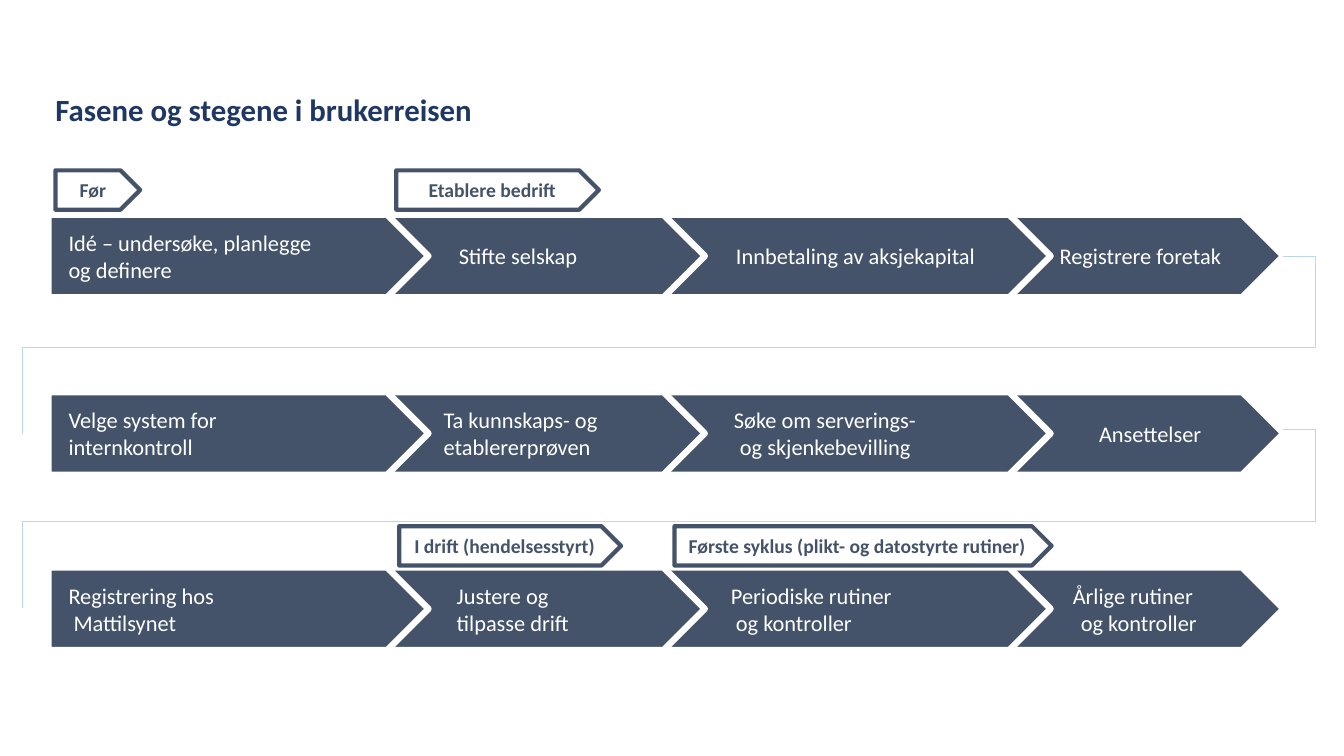
from pptx import Presentation
from pptx.dml.color import RGBColor
from pptx.enum.shapes import MSO_SHAPE as Shape
from pptx.enum.text import MSO_ANCHOR as Anchor, PP_ALIGN as Align
from pptx.util import Inches, Pt

HUES = {"slate": "44536A", "navy": "1F3863", "sky": "BCD6ED", "white": "FFFFFF"}

COLS = [(0.48, 3.77), (3.7, 3.29), (6.15, 4.27), (9.95, 2.78)]
STEP_H = 0.82
TAG_H = 0.39

ROWS = [
    (2.13, [
        ("Idé – undersøke, planlegge\vog definere", 0.2, 0),
        ("Stifte selskap", 0.85, 0),
        ("Innbetaling av aksjekapital", 1.15, 0),
        ("Registrere foretak", 0.56, 0),
    ]),
    (3.89, [
        ("Velge system for\vinternkontroll", 0.2, 0),
        ("Ta kunnskaps- og\vetablererprøven", 0.7, 0),
        ("Søke om serverings-\vog skjenkebevilling", 1.13, 0.06),
        ("Ansettelser", 0.95, 0),
    ]),
    (5.63, [
        ("Registrering hos\vMattilsynet", 0.2, 0.05),
        ("Justere og\vtilpasse drift", 0.83, 0),
        ("Periodiske rutiner\vog kontroller", 1.1, 0.05),
        ("Årlige rutiner\vog kontroller", 0.69, 0.08),
    ]),
]

TAGS = [
    ("Før", 0.55, 1.69, 0.84, 0.24),
    ("Etablere bedrift", 3.93, 1.69, 2.01, 0.32),
    ("I drift (hendelsesstyrt)", 3.96, 5.22, 2.2, 0.15),
    ("Første syklus (plikt- og datostyrte rutiner)", 6.69, 5.22, 3.74, 0.14),
]


def hue(name):
    return RGBColor.from_string(HUES[name])


def write(shape, text, size, tint, bold=False, inset=0, hang=0):
    frame = shape.text_frame
    frame.word_wrap = True
    frame.vertical_anchor = Anchor.MIDDLE
    frame.margin_left = Inches(inset)
    frame.margin_top = frame.margin_right = frame.margin_bottom = 0
    para = frame.paragraphs[0]
    para.text = text
    para.alignment = Align.LEFT
    para.line_spacing = 1.0
    para.font.name = "Calibri"
    para.font.size = Pt(size)
    para.font.bold = bold
    para.font.color.rgb = hue(tint)
    if hang:
        props = para._p.get_or_add_pPr()
        props.set("marL", str(Inches(hang)))
        props.set("indent", str(-Inches(hang)))


def add_plate(slide, left, top, width, height, edge, weight):
    plate = slide.shapes.add_shape(
        Shape.PENTAGON, Inches(left), Inches(top), Inches(width), Inches(height))
    plate.shadow.inherit = False
    plate.line.color.rgb = hue(edge)
    plate.line.width = Pt(weight)
    return plate


def add_title(slide, left, top, width, height):
    title = slide.shapes.title
    title.left, title.top = Inches(left), Inches(top)
    title.width, title.height = Inches(width), Inches(height)
    write(title, "Fasene og stegene i brukerreisen", 22, "navy", True)


def add_row(slide, top, steps):
    for (left, width), (text, inset, hang) in reversed(list(zip(COLS, steps))):
        plate = add_plate(slide, left, top, width, STEP_H, "white", 4.56)
        plate.fill.solid()
        plate.fill.fore_color.rgb = hue("slate")
        write(plate, text, 16, "white", inset=inset, hang=hang)


def add_tag(slide, text, left, top, width, inset):
    plate = add_plate(slide, left, top, width, TAG_H, "slate", 3)
    plate.fill.background()
    write(plate, text, 14, "slate", True, inset)


def add_route(slide, left, top, width, height):
    right, turn = left + width, top + 0.91
    points = [(right, top), (right, turn), (left, turn), (left, top + height)]
    pen = slide.shapes.build_freeform(Inches(right - 0.32), Inches(top))
    pen.add_line_segments([(Inches(x), Inches(y)) for x, y in points], close=False)
    route = pen.convert_to_shape()
    route.shadow.inherit = False
    route.fill.background()
    route.line.color.rgb = hue("sky")
    route.line.width = Pt(0.48)


def main():
    deck = Presentation()
    deck.slide_width, deck.slide_height = Inches(13.33), Inches(7.5)
    slide = deck.slides.add_slide(deck.slide_layouts[5])
    add_title(slide, 0.55, 0.89, 4.5, 0.39)
    for top, steps in ROWS:
        add_row(slide, top, steps)
    for top in (2.54, 4.26):
        add_route(slide, 0.22, top, 12.83, 1.77)
    for tag in TAGS:
        add_tag(slide, *tag)
    deck.save("out.pptx")


if __name__ == "__main__":
    main()
